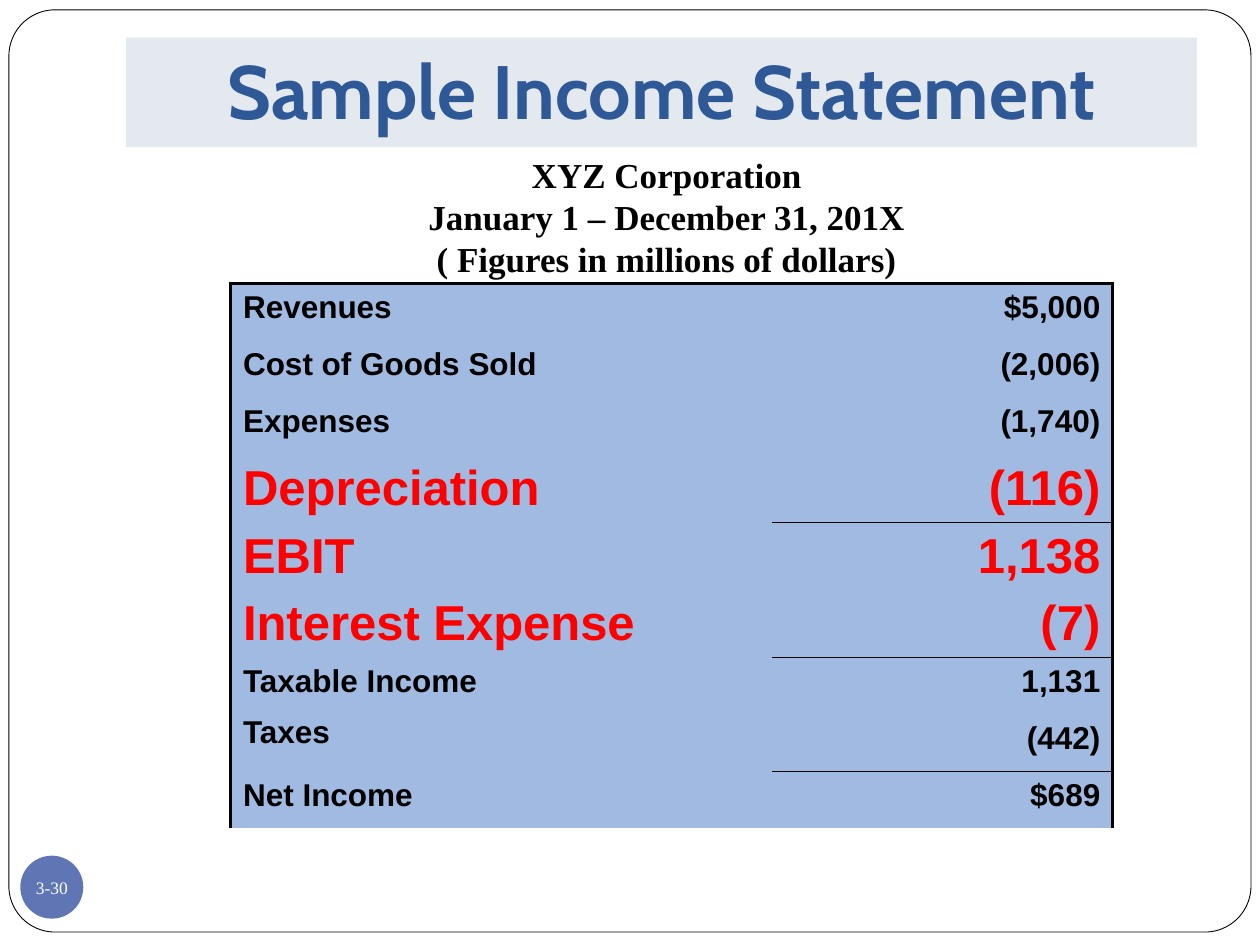
from lxml.etree import SubElement
from pptx import Presentation
from pptx.dml.color import RGBColor
from pptx.enum.shapes import MSO_SHAPE
from pptx.enum.text import MSO_ANCHOR, PP_ALIGN
from pptx.oxml import parse_xml
from pptx.oxml.ns import nsdecls, qn
from pptx.util import Cm, Pt

COLORS = {
    "black": "000000", "white": "FFFFFF", "red": "FF0000", "badge": "6076B4",
    "banner": "E4E9EF", "title": "2F5897", "cell": "A0BAE1",
}
TITLE = "Sample Income Statement"
HEADING = ["XYZ Corporation", "January 1 – December 31, 201X",
           "( Figures in millions of dollars)"]
PAGE_NUMBER = "3-30"
STATEMENT = [
    ("Revenues", "$5,000"),
    ("Cost of Goods Sold", "(2,006)"),
    ("Expenses", "(1,740)"),
    ("Depreciation", "(116)"),
    ("EBIT", "1,138"),
    ("Interest Expense", "(7)"),
    ("Taxable Income", "1,131"),
    ("Taxes", "(442)"),
    ("Net Income", "$689"),
]
HIGHLIGHTED = {"Depreciation", "EBIT", "Interest Expense"}
SUBTOTALS = {"EBIT", "Taxable Income", "Net Income"}
COLUMN_WIDTHS = (10.92, 6.86)
ROW_HEIGHT = 1.15
FRAME_WIDTH, RULE_WIDTH = 2.25, 1


def color(name):
    return RGBColor.from_string(COLORS[name])


def write(frame, lines, font, size, ink, bold=True, align=PP_ALIGN.CENTER):
    """Fill a text frame with one styled run per line."""
    for index, line in enumerate(lines):
        paragraph = frame.add_paragraph() if index else frame.paragraphs[0]
        paragraph.alignment = align
        span = paragraph.add_run()
        span.text = line
        span.font.name = font
        span.font.size = Pt(size)
        span.font.bold = bold
        span.font.color.rgb = color(ink)


def add_panel(page, kind, place, fill, line=None):
    """Add a flat preset shape with an optional thin outline."""
    panel = page.shapes.add_shape(kind, *map(Cm, place))
    panel.shadow.inherit = False
    panel.fill.solid()
    panel.fill.fore_color.rgb = color(fill)
    if line:
        panel.line.color.rgb = color(line)
        panel.line.width = Pt(0.5)
    else:
        panel.line.fill.background()
    return panel


def set_borders(cell, widths):
    """Draw the left, right, top and bottom borders; zero means none."""
    properties = cell._tc.get_or_add_tcPr()
    for index, (side, width) in enumerate(zip("LRTB", widths)):
        border = parse_xml(f'<a:ln{side} {nsdecls("a")} w="{Pt(width)}"/>')
        if width:
            fill = SubElement(border, qn("a:solidFill"))
            SubElement(fill, qn("a:srgbClr"), val=COLORS["black"])
        else:
            SubElement(border, qn("a:noFill"))
        properties.insert(index, border)


def add_statement(page):
    """Build the income statement table."""
    count = len(STATEMENT)
    table = page.shapes.add_table(
        count, 2, Cm(4.65), Cm(5.72), Cm(sum(COLUMN_WIDTHS)), Cm(ROW_HEIGHT * count)).table
    table.first_row = table.horz_banding = False
    for column, width in zip(table.columns, COLUMN_WIDTHS):
        column.width = Cm(width)
    for row, (label, amount) in enumerate(STATEMENT):
        table.rows[row].height = Cm(ROW_HEIGHT)
        size, ink = (28, "red") if label in HIGHLIGHTED else (18, "black")
        top = FRAME_WIDTH if row == 0 else 0
        above = RULE_WIDTH if label in SUBTOTALS else top
        closes = row + 1 < count and STATEMENT[row + 1][0] in SUBTOTALS
        below = RULE_WIDTH if closes else 0
        sides = [
            (label, PP_ALIGN.LEFT, (FRAME_WIDTH, 0, top, 0)),
            (amount, PP_ALIGN.RIGHT, (0, FRAME_WIDTH, above, below)),
        ]
        for column, (words, align, borders) in enumerate(sides):
            cell = table.cell(row, column)
            cell.fill.solid()
            cell.fill.fore_color.rgb = color("cell")
            cell.margin_left = cell.margin_right = Cm(0.25)
            cell.margin_top = cell.margin_bottom = Cm(0 if words == "Taxes" else 0.13)
            write(cell.text_frame, [words], "Arial", size, ink, align=align)
            set_borders(cell, borders)


def main():
    """Build the income statement slide."""
    deck = Presentation()
    deck.slide_width, deck.slide_height = Cm(25.4), Cm(19.05)
    page = deck.slides.add_slide(deck.slide_layouts[6])

    border = add_panel(page, MSO_SHAPE.ROUNDED_RECTANGLE,
                       (0.18, 0.2, 25.04, 18.59), "white", "black")
    border.adjustments[0] = 0.05

    badge = add_panel(page, MSO_SHAPE.OVAL, (0.41, 17.25, 1.27, 1.27), "badge")
    frame = badge.text_frame
    frame.margin_left = frame.margin_right = frame.margin_top = frame.margin_bottom = 0
    frame.word_wrap = False
    frame.vertical_anchor = MSO_ANCHOR.MIDDLE
    write(frame, [PAGE_NUMBER], "Times New Roman", 10, "white", bold=False)

    banner = add_panel(page, MSO_SHAPE.RECTANGLE, (2.54, 0.76, 21.59, 2.21), "banner")
    banner.text_frame.margin_bottom = Cm(0.25)
    banner.text_frame.vertical_anchor = MSO_ANCHOR.BOTTOM
    write(banner.text_frame, [TITLE], "Cabin", 43.2, "title")

    add_statement(page)

    heading = page.shapes.add_textbox(Cm(5.92), Cm(2.97), Cm(15.04), Cm(2.82))
    heading.text_frame.word_wrap = True
    write(heading.text_frame, HEADING, "Times New Roman", 20, "black")

    deck.save("out.pptx")


if __name__ == "__main__":
    main()
